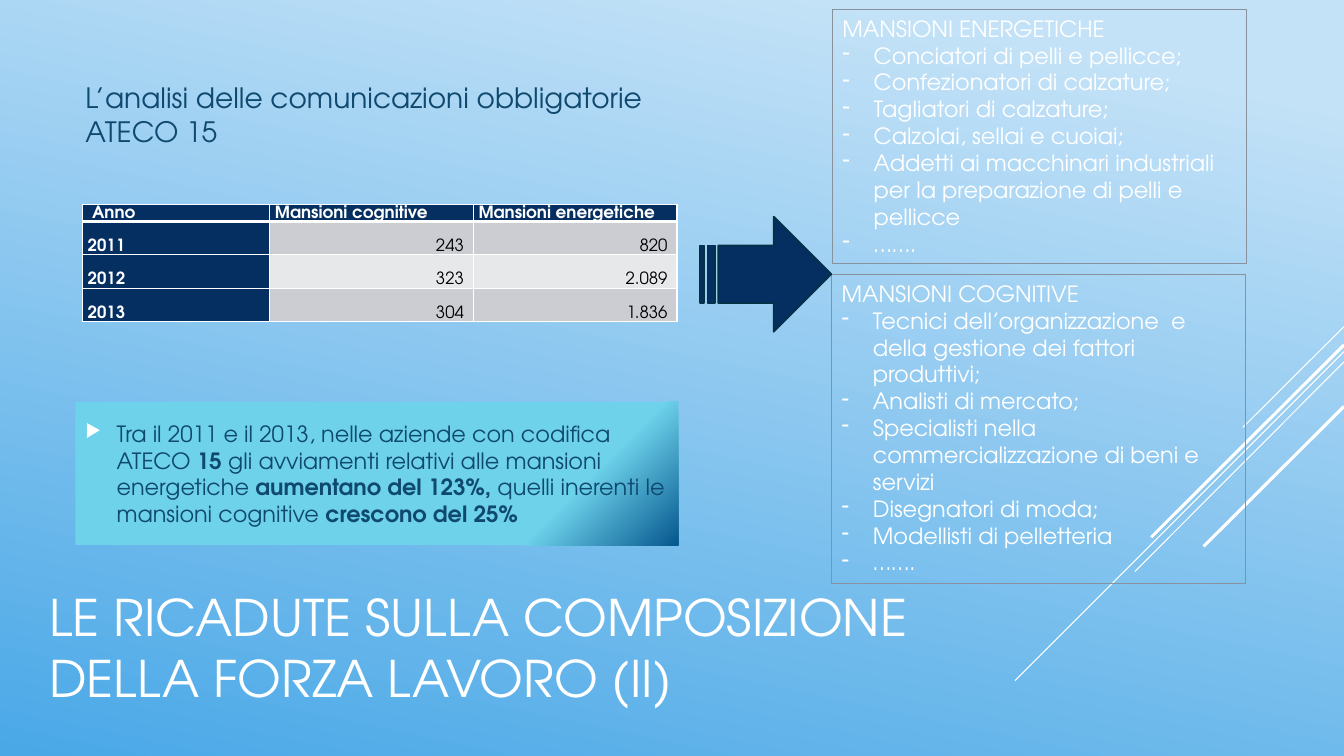
"""Build the slide on how the workforce mix changed, with its table and job lists."""
from dataclasses import dataclass

from lxml.etree import SubElement as Sub
from pptx import Presentation
from pptx.dml.color import RGBColor as RGB
from pptx.enum.shapes import MSO_CONNECTOR as Link, MSO_SHAPE as Shape
from pptx.enum.text import MSO_ANCHOR as Anchor, MSO_AUTO_SIZE as Auto, PP_ALIGN as Align
from pptx.oxml.ns import qn
from pptx.util import Cm, Pt


@dataclass(frozen=True)
class Theme:
    """Hold the colours, the font and the type sizes."""
    font: str = "TeX Gyre Adventor"
    white: str = "FFFFFF"
    black: str = "000000"
    ink: str = "0F496F"
    navy: str = "052F61"
    edge: str = "043148"
    frame: str = "89919C"
    bands: tuple = ("CCCDD2", "E7E8EA")
    sky: tuple = ((0.1, "C3E2F7"), (1, "4AA8E7"))
    glow: tuple = ((0.79, "6ED2EB"), (1, "06588E"))
    title: int = 36
    lead: int = 20
    text: int = 16
    cell: int = 12


T = Theme()
RAYS = [
    (8.23, 31.32, 10.77, 0.75),
    (8.86, 25.58, 17.15, 0.75),
    (9.12, 28.6, 14.4, 0.75),
    (8.69, 29.01, 13.54, 2.25),
    (10.24, 30.33, 13.77, 2.25),
]
ROWS = [
    ("Anno", "Mansioni cognitive", "Mansioni energetiche"),
    ("2011", "243", "820"),
    ("2012", "323", "2.089"),
    ("2013", "304", "1.836"),
]
NOTE = [
    ("Tra il 2011 e il 2013, nelle aziende con codifica ATECO ", False),
    ("15 ", True),
    ("gli avviamenti relativi alle mansioni energetiche", False),
    (" aumentano del 123%, ", True),
    ("quelli inerenti le mansioni cognitive", False),
    (" crescono del 25%", True),
]
POWER = [
    "MANSIONI ENERGETICHE",
    "Conciatori di pelli e pellicce;",
    "Confezionatori di calzature;",
    "Tagliatori di calzature;",
    "Calzolai, sellai e cuoiai;",
    "Addetti ai macchinari industriali per la preparazione di pelli e pellicce",
    "…….",
]
MIND = [
    "MANSIONI COGNITIVE",
    "Tecnici dell’organizzazione  e della gestione dei fattori produttivi;",
    "Analisti di mercato;",
    "Specialisti nella commercializzazione di beni e servizi",
    "Disegnatori di moda;",
    "Modellisti di pelletteria",
    "…….",
]


def style(para, size, color, bold=False, align=Align.LEFT):
    """Format every run of a paragraph."""
    para.alignment = align
    for run in para.runs:
        font = run.font
        font.name, font.size, font.bold = T.font, Pt(size), bold
        font.color.rgb = RGB.from_string(color)


def bullet(para, mark, color=None, scale=None):
    """Give a paragraph a hanging bullet."""
    props = para._p.get_or_add_pPr()
    props.set("marL", str(Cm(0.79)))
    props.set("indent", str(-Cm(0.79)))
    if color:
        Sub(Sub(props, qn("a:buClr")), qn("a:srgbClr"), val=color)
    if scale:
        Sub(props, qn("a:buSzPct"), val=str(scale * 1000))
    Sub(props, qn("a:buChar"), char=mark)


def blend(fill, stops, angle):
    """Fill with a two-stop gradient turned clockwise by angle."""
    fill.gradient()
    fill.gradient_angle = 360 - angle
    for stop, (place, color) in zip(fill.gradient_stops, stops):
        stop.position = place
        stop.color.rgb = RGB.from_string(color)


def paint(fill, color):
    """Fill with one colour."""
    fill.solid()
    fill.fore_color.rgb = RGB.from_string(color)


def place(item, left, top, width, height):
    """Move and size a placeholder, in centimetres."""
    item.left, item.top = Cm(left), Cm(top)
    item.width, item.height = Cm(width), Cm(height)


def form(slide, kind, area):
    """Add a preset shape without shadow."""
    item = slide.shapes.add_shape(kind, *map(Cm, area))
    item.shadow.inherit = False
    return item


def outline(item, color, width):
    """Draw the outline of a shape."""
    item.line.color.rgb = RGB.from_string(color)
    item.line.width = Pt(width)


def ray(slide, top, left, base, width):
    """Draw a slanted line from the right edge of the slide."""
    item = slide.shapes.add_connector(Link.STRAIGHT, Cm(33.87), Cm(top), Cm(left), Cm(base))
    outline(item, T.white, width)
    Sub(item._element.spPr, qn("a:effectLst"))


def heads(slide):
    """Fill the title and the lead text."""
    title, body = slide.shapes.title, slide.placeholders[1]
    place(title, 0.99, 14.2, 23.7, 4.19)
    place(body, 1.9, 1.9, 16.46, 10.03)
    title.text_frame.text = "LE RICADUTE SULLA COMPOSIZIONE DELLA FORZA LAVORO (II)"
    body.text_frame.text = "L’analisi delle comunicazioni obbligatorie ATECO 15"
    for item, anchor, size, color in (
        (title, Anchor.MIDDLE, T.title, T.white),
        (body, Anchor.TOP, T.lead, T.ink),
    ):
        frame = item.text_frame
        frame.auto_size, frame.vertical_anchor = Auto.NONE, anchor
        style(frame.paragraphs[0], size, color)
    para = body.text_frame.paragraphs[0]
    para.space_before, para.space_after = Pt(4), Pt(6)
    props = para._p.get_or_add_pPr()
    props.set("marL", "0")
    props.set("indent", "0")
    Sub(props, qn("a:buNone"))


def border(cell, base):
    """Draw white cell borders, with a bottom edge of its own width."""
    props = cell._tc.get_or_add_tcPr()
    for side, width in (("L", 1), ("R", 1), ("T", 1), ("B", base)):
        line = Sub(props, qn(f"a:ln{side}"), w=str(Pt(width)))
        Sub(Sub(line, qn("a:solidFill")), qn("a:srgbClr"), val=T.white)


def grid(slide):
    """Add the table of yearly counts."""
    holder = slide.shapes.add_table(len(ROWS), 3, Cm(2.08), Cm(5.16), Cm(14.99), Cm(3.02))
    table = holder.table
    for col, width in zip(table.columns, (4.72, 5.13, 5.13)):
        col.width = Cm(width)
    for row, texts in enumerate(ROWS):
        table.rows[row].height = Cm(0.84 if row else 0.15)
        for col, text in enumerate(texts):
            cell = table.cell(row, col)
            count = row > 0 and col > 0
            border(cell, 1 if row else 3)
            paint(cell.fill, T.bands[(row - 1) % 2] if count else T.navy)
            cell.vertical_anchor = Anchor.BOTTOM
            cell.margin_top = cell.margin_bottom = 0
            cell.margin_left = Cm(0.13 if row or col else 0.24)
            cell.margin_right = Cm(0.24 if count else 0.13)
            cell.text_frame.text = text
            para = cell.text_frame.paragraphs[0]
            para.line_spacing = 1.07
            style(para, T.cell, T.black if count else T.white, not count,
                  Align.RIGHT if count else Align.LEFT)
    holder.height = Cm(3.02)


def note(slide):
    """Add the gradient box with the finding."""
    item = form(slide, Shape.RECTANGLE, (1.9, 10.13, 15.19, 3.61))
    blend(item.fill, T.glow, 45)
    item.line.fill.background()
    frame = item.text_frame
    frame.word_wrap, frame.vertical_anchor = True, Anchor.MIDDLE
    para = frame.paragraphs[0]
    para.space_before, para.space_after = Pt(3.2), Pt(6)
    for text, _ in NOTE:
        para.add_run().text = text
    style(para, T.text, T.ink)
    for run, (_, bold) in zip(para.runs, NOTE):
        run.font.bold = bold
    bullet(para, "▶", T.white, 80)


def jobs(slide, area, lines):
    """Add a framed list of jobs under its heading."""
    item = form(slide, Shape.RECTANGLE, area)
    item.fill.background()
    outline(item, T.frame, 0.75)
    frame = item.text_frame
    frame.word_wrap, frame.vertical_anchor = True, Anchor.TOP
    frame.auto_size = Auto.SHAPE_TO_FIT_TEXT
    frame.text = "\n".join(lines)
    for para in frame.paragraphs:
        style(para, T.text, T.white)
    for para in frame.paragraphs[1:]:
        bullet(para, "-")


def arrow(slide):
    """Add the striped arrow from the table to the lists."""
    item = form(slide, Shape.STRIPED_RIGHT_ARROW, (17.65, 5.46, 3.3, 2.9))
    paint(item.fill, T.navy)
    outline(item, T.edge, 1.25)


def main():
    """Build and save the slide."""
    deck = Presentation()
    deck.slide_width, deck.slide_height = Cm(33.87), Cm(19.05)
    slide = deck.slides.add_slide(deck.slide_layouts[1])
    blend(slide.background.fill, T.sky, 102)
    for line in RAYS:
        ray(slide, *line)
    heads(slide)
    grid(slide)
    note(slide)
    jobs(slide, (20.98, 0.25, 10.44, 6.4), POWER)
    jobs(slide, (20.96, 6.93, 10.44, 7.77), MIND)
    arrow(slide)
    deck.save("out.pptx")


if __name__ == "__main__":
    main()
